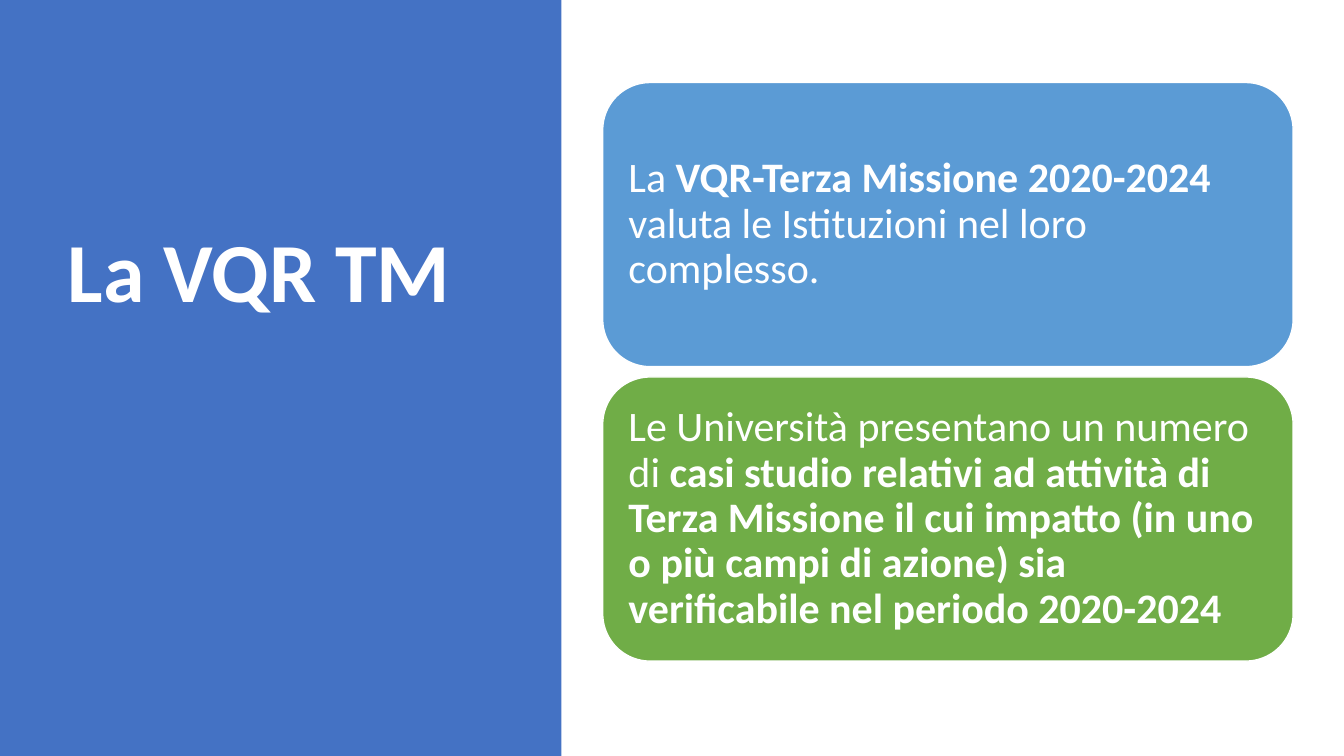
from pptx import Presentation
from pptx.dml.color import RGBColor
from pptx.enum.shapes import MSO_SHAPE
from pptx.enum.text import MSO_ANCHOR, MSO_AUTO_SIZE, PP_ALIGN
from pptx.util import Cm, Pt

WHITE = RGBColor(0xFF, 0xFF, 0xFF)
PANEL_BLUE = RGBColor(0x44, 0x72, 0xC4)
CARD_BLUE = RGBColor(0x5B, 0x9B, 0xD5)
CARD_GREEN = RGBColor(0x70, 0xAD, 0x47)

TITLE_ONLY = 5
CARD_GAP = 0.26
CARD_INSET = Cm(0.3)

# Each card: fill colour, then (text, bold) runs
CARDS = [
    (CARD_BLUE, [
        ("La ", False),
        ("VQR-Terza Missione 2020-2024 ", True),
        ("valuta le Istituzioni nel loro complesso.", False),
    ]),
    (CARD_GREEN, [
        ("Le Università presentano un numero di ", False),
        ("casi studio relativi ad attività di Terza Missione il cui impatto "
         "(in uno o più campi di azione) sia verificabile nel periodo "
         "2020-2024", True),
    ]),
]


def set_attributes(target, values):
    for name, value in values.items():
        setattr(target, name, value)


def write_runs(text_frame, runs, size):
    paragraph = text_frame.paragraphs[0]
    set_attributes(paragraph, {"alignment": PP_ALIGN.LEFT, "line_spacing": 0.9})
    for text, bold in runs:
        run = paragraph.add_run()
        run.text = text
        set_attributes(run.font, {"name": "Calibri", "size": Pt(size), "bold": bold})
        run.font.color.rgb = WHITE


def add_filled_shape(slide, kind, box, color):
    shape = slide.shapes.add_shape(kind, *[Cm(length) for length in box])
    shape.shadow.inherit = False
    shape.fill.solid()
    shape.fill.fore_color.rgb = color
    shape.line.fill.background()
    return shape


def add_title_panel(slide, left, top, width, height):
    # Coloured panel, behind the title
    panel = add_filled_shape(
        slide, MSO_SHAPE.RECTANGLE, (left, top, width, height), PANEL_BLUE)
    title = slide.shapes.title
    title.element.addprevious(panel.element)

    # Title, raised above the middle by its bottom margin
    set_attributes(title, {
        "left": Cm(left + 1.45), "top": Cm(top + 1.73),
        "width": Cm(width - 3.58), "height": Cm(height - 3.76),
    })
    set_attributes(title.text_frame, {
        "word_wrap": True,
        "auto_size": MSO_AUTO_SIZE.NONE,
        "vertical_anchor": MSO_ANCHOR.MIDDLE,
        "margin_bottom": Cm(5),
    })
    write_runs(title.text_frame, [("La VQR TM", True)], 60)


def add_cards(slide, left, top, width, height):
    card_height = (height - CARD_GAP * (len(CARDS) - 1)) / len(CARDS)
    for index, (color, runs) in enumerate(CARDS):
        card_top = top + index * (card_height + CARD_GAP)
        card = add_filled_shape(
            slide, MSO_SHAPE.ROUNDED_RECTANGLE,
            (left, card_top, width, card_height), color)
        card.line.color.rgb = WHITE
        card.line.width = Pt(1)
        set_attributes(card.text_frame, {
            "word_wrap": True,
            "vertical_anchor": MSO_ANCHOR.MIDDLE,
            "margin_left": CARD_INSET, "margin_right": CARD_INSET,
            "margin_top": CARD_INSET, "margin_bottom": CARD_INSET,
        })
        write_runs(card.text_frame, runs, 30)


def main():
    presentation = Presentation()
    presentation.slide_width = Cm(33.87)
    presentation.slide_height = Cm(19.05)
    slide = presentation.slides.add_slide(presentation.slide_layouts[TITLE_ONLY])
    add_title_panel(slide, 0, 0, 14.15, 19.05)
    add_cards(slide, 15.19, 2.08, 17.4, 14.58)
    presentation.save("out.pptx")


if __name__ == "__main__":
    main()
